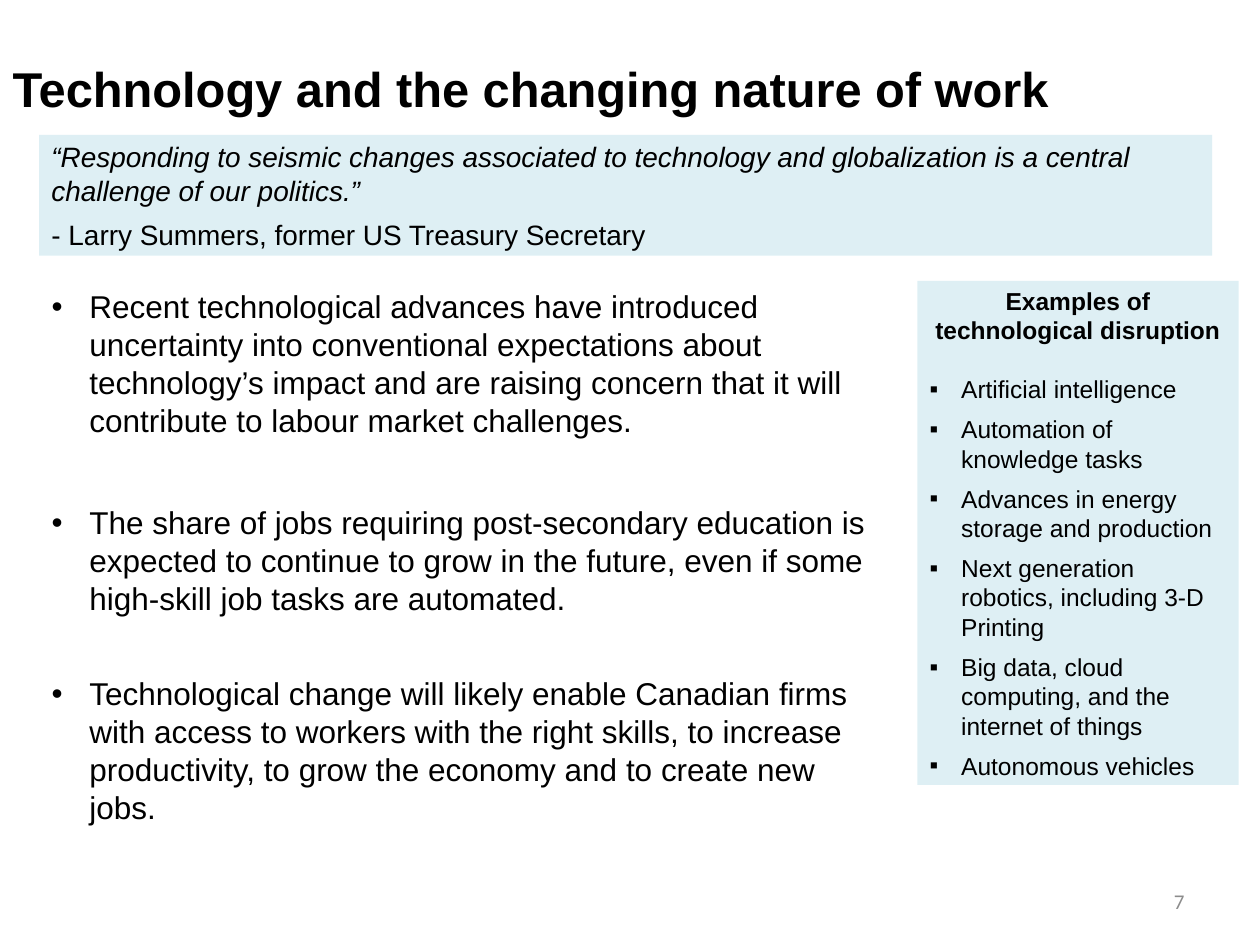
from lxml import etree
from pptx import Presentation
from pptx.dml.color import RGBColor
from pptx.enum.shapes import MSO_SHAPE
from pptx.enum.text import MSO_ANCHOR, MSO_AUTO_SIZE, PP_ALIGN
from pptx.oxml.ns import qn
from pptx.util import Inches, Pt

RECT = MSO_SHAPE.RECTANGLE
TOP, MIDDLE = MSO_ANCHOR.TOP, MSO_ANCHOR.MIDDLE
LEFT, CENTER, RIGHT = PP_ALIGN.LEFT, PP_ALIGN.CENTER, PP_ALIGN.RIGHT
NO_AUTOFIT = MSO_AUTO_SIZE.NONE
BLACK = RGBColor(0x00, 0x00, 0x00)
GREY = RGBColor(0x8C, 0x8C, 0x8C)
PALE_BLUE = RGBColor(0x93, 0xCD, 0xDD)
PANEL_OPACITY = 30

QUOTE = ("“Responding to seismic changes associated to technology and "
         "globalization is a central challenge of our politics.”")
SPEAKER = "- Larry Summers, former US Treasury Secretary"
# Each point with the space before it, in points
POINTS = [
    ("Recent technological advances have introduced uncertainty into "
     "conventional expectations about technology’s impact and are raising "
     "concern that it will contribute to labour market challenges.", 0),
    ("The share of jobs requiring post-secondary education is expected to "
     "continue to grow in the future, even if some high-skill job tasks are "
     "automated.", 31),
    ("Technological change will likely enable Canadian firms with access to "
     "workers with the right skills, to increase productivity, to grow the "
     "economy and to create new jobs.", 27),
]
EXAMPLES = [
    "Artificial intelligence",
    "Automation of knowledge tasks",
    "Advances in energy storage and production",
    "Next generation robotics, including 3-D Printing",
    "Big data, cloud computing, and the internet of things",
    "Autonomous vehicles",
]


def place(s, box):
    s.left, s.top, s.width, s.height = (Inches(v) for v in box)


def set_frame(tf, anchor):
    tf.word_wrap = True
    tf.auto_size = NO_AUTOFIT
    tf.vertical_anchor = anchor


def add_bullet(p, char, indent):
    """Give the paragraph a bullet with a hanging indent in inches."""
    pPr = p._p.get_or_add_pPr()
    pPr.set("marL", str(Inches(indent)))
    pPr.set("indent", str(-Inches(indent)))
    etree.SubElement(pPr, qn("a:buFont"), typeface="Arial")
    etree.SubElement(pPr, qn("a:buChar"), char=char)


def add_paragraph(tf, text, size, bullet=None, align=LEFT, before=0, after=6,
                  bold=False, italic=False, font="Arial", color=BLACK):
    """Write into the empty first paragraph, or into a new one after it."""
    first = tf.paragraphs[0]
    p = tf.add_paragraph() if first.runs else first
    if bullet:
        add_bullet(p, *bullet)
    p.alignment = align
    p.space_before, p.space_after = Pt(before), Pt(after)
    r = p.add_run()
    r.text = text
    r.font.name, r.font.size, r.font.color.rgb = font, Pt(size), color
    r.font.bold, r.font.italic = bold, italic


def add_title(slide, box):
    s = slide.shapes.title
    place(s, box)
    set_frame(s.text_frame, MIDDLE)
    s.text_frame.margin_top = Inches(0.11)
    add_paragraph(s.text_frame, "Technology and the changing nature of work",
                  27.9, after=0, bold=True)


def add_points(slide, box):
    s = slide.placeholders[1]
    place(s, box)
    set_frame(s.text_frame, TOP)
    for text, before in POINTS:
        add_paragraph(s.text_frame, text, 18, ("•", 0.3), before=before)


def add_panel(slide, box):
    """Add a translucent rectangle and return its text frame."""
    s = slide.shapes.add_shape(RECT, *(Inches(v) for v in box))
    s.shadow.inherit = False
    s.fill.solid()
    s.fill.fore_color.rgb = PALE_BLUE
    color = s.fill._xPr.find(".//" + qn("a:srgbClr"))
    etree.SubElement(color, qn("a:alpha"), val=str(PANEL_OPACITY * 1000))
    s.line.fill.background()
    set_frame(s.text_frame, MIDDLE)
    return s.text_frame


def add_quote(slide, box):
    tf = add_panel(slide, box)
    add_paragraph(tf, QUOTE, 16, italic=True)
    add_paragraph(tf, SPEAKER, 16)


def add_examples(slide, box):
    tf = add_panel(slide, box)
    add_paragraph(tf, "Examples of technological disruption", 14,
                  align=CENTER, after=0, bold=True)
    for i, text in enumerate(EXAMPLES):
        add_paragraph(tf, text, 14, ("▪", 0.25), before=0 if i else 17)


def add_page_number(slide, box):
    s = slide.shapes.add_textbox(*(Inches(v) for v in box))
    set_frame(s.text_frame, MIDDLE)
    add_paragraph(s.text_frame, "7", 12, align=RIGHT, after=0,
                  font="Calibri", color=GREY)


def main():
    prs = Presentation()
    prs.slide_width, prs.slide_height = Inches(10), Inches(7.5)
    slide = prs.slides.add_slide(prs.slide_layouts[1])
    add_title(slide, (0, 0.3, 9, 0.73))
    add_points(slide, (0.31, 2.23, 6.86, 4.48))
    add_quote(slide, (0.31, 1.07, 9.31, 0.96))
    add_examples(slide, (7.28, 2.23, 2.55, 4))
    add_page_number(slide, (7.17, 6.95, 2.33, 0.4))
    prs.save("out.pptx")


if __name__ == "__main__":
    main()
